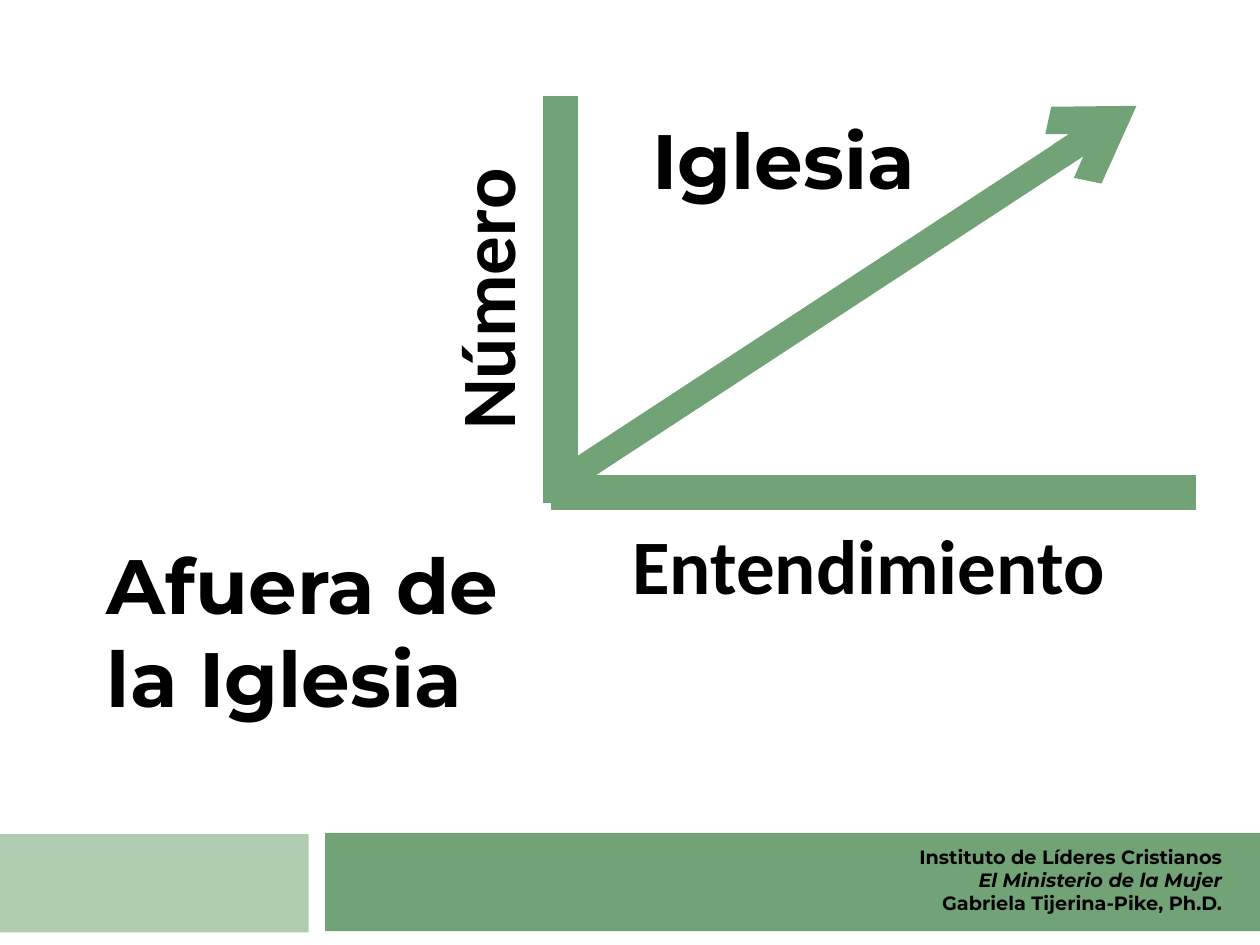
import pptx
import pptx.util
import pptx.dml.color
import pptx.enum.shapes
import pptx.enum.text
import pptx.oxml.ns
from lxml import etree

BLACK = pptx.dml.color.RGBColor(0x00, 0x00, 0x00)
GREEN = pptx.dml.color.RGBColor(0x72, 0xA3, 0x76)
PALE_GREEN = pptx.dml.color.RGBColor(0xB0, 0xCC, 0xB0)
CELL = pptx.util.Inches(0.1)
COLUMNS, ROWS = 100, 75
LABEL_HEIGHT = 8.4
ORIGIN_COL = 44.5


def grid(*cells):
    """Turn columns and rows of the grid into slide lengths."""
    return [round(n * CELL) for n in cells]


def add_band(s, col, row, cols, rows, color):
    """Add a plain footer band."""
    sp = s.shapes.add_shape(
        pptx.enum.shapes.MSO_SHAPE.RECTANGLE, *grid(col, row, cols, rows))
    sp.shadow.inherit = False
    sp.fill.solid()
    sp.fill.fore_color.rgb = color
    sp.line.fill.background()


def add_text(s, col, row, cols, rows, lines, size=44, font="Montserrat",
             align=pptx.enum.text.PP_ALIGN.LEFT, rotation=0, italic_lines=()):
    """Add a bold text box with one paragraph per line."""
    sp = s.shapes.add_textbox(*grid(col, row, cols, rows))
    sp.rotation = rotation
    tf = sp.text_frame
    tf.word_wrap = True
    tf.auto_size = pptx.enum.text.MSO_AUTO_SIZE.SHAPE_TO_FIT_TEXT
    for i, line in enumerate(lines):
        p = tf.add_paragraph() if i else tf.paragraphs[0]
        p.alignment = align
        r = p.add_run()
        r.text = line
        r.font.name = font
        r.font.size = pptx.util.Pt(size)
        r.font.bold = True
        r.font.italic = i in italic_lines
        r.font.color.rgb = BLACK


def add_line(s, start, end, width, arrow=False):
    """Add a straight green line, with an arrowhead at its end if asked."""
    sp = s.shapes.add_connector(
        pptx.enum.shapes.MSO_CONNECTOR.STRAIGHT, *grid(*start, *end))
    sp.line.color.rgb = GREEN
    sp.line.width = pptx.util.Pt(width)
    qn = pptx.oxml.ns.qn
    if arrow:
        ln = sp.line._get_or_add_ln()
        etree.SubElement(ln, qn("a:tailEnd")).set("type", "arrow")
    etree.SubElement(sp._element.spPr, qn("a:effectLst"))


def add_footer(s):
    """Add the two bands and the credits."""
    add_band(s, -0.1, 66.2, 24.6, 7.8, PALE_GREEN)
    add_band(s, 25.8, 66.1, COLUMNS - 25.8, 7.8, GREEN)
    add_text(s, 16.1, 66.6, 81.9, 6.6,
             ["Instituto de Líderes Cristianos",
              "El Ministerio de la Mujer",
              "Gabriela Tijerina-Pike, Ph.D."],
             size=11, align=pptx.enum.text.PP_ALIGN.RIGHT, italic_lines=(1,))


def add_diagram(s):
    """Add the axes, the growth arrow and their labels."""
    add_text(s, 50.8, 8.4, 64.6, LABEL_HEIGHT, ["Iglesia"])
    add_line(s, (ORIGIN_COL, 7.6), (ORIGIN_COL, 39.9), 20)
    add_line(s, (94.9, 39.1), (43.7, 39.1), 20)
    add_text(s, 25.1, 17.5, 26.8, LABEL_HEIGHT, ["Número"],
             font="Calibri", rotation=270)
    add_text(s, 49.2, 40.6, 45.7, LABEL_HEIGHT, ["Entendimiento"],
             font="Calibri")
    add_line(s, (ORIGIN_COL, 38.3), (90.2, 8.4), 15, arrow=True)
    add_text(s, 7.5, 42.2, 64.6, 15.8, ["Afuera de", "la Iglesia"])


def main():
    """Build the slide and save it."""
    prs = pptx.Presentation()
    prs.slide_width, prs.slide_height = grid(COLUMNS, ROWS)
    s = prs.slides.add_slide(prs.slide_layouts[6])
    add_footer(s)
    add_diagram(s)
    prs.save("out.pptx")


if __name__ == "__main__":
    main()
